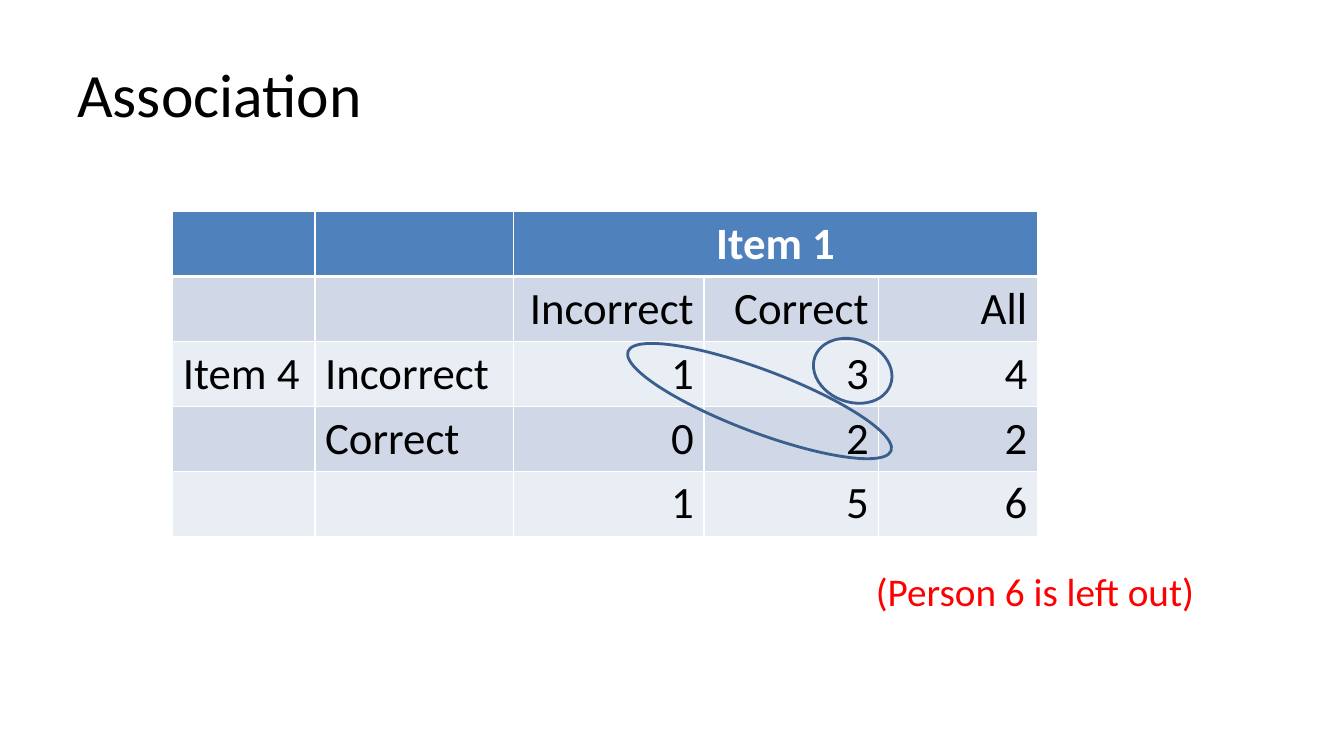
from lxml import etree
from pptx import Presentation
from pptx.dml.color import RGBColor
from pptx.enum import shapes, text
from pptx.oxml.ns import qn
from pptx.util import Pt

TITLE = "Association"
NOTE = "(Person 6 is left out)"
ROWS = [
    ["", "", "Item 1", "", ""],
    ["", "", "Incorrect", "Correct", "All"],
    ["Item 4", "Incorrect", "1", "3", "4"],
    ["", "Correct", "0", "2", "2"],
    ["", "", "1", "5", "6"],
]
LABELS = 2  # leading columns that hold row labels

THEME = {
    "font": "Calibri", "black": "000000", "white": "FFFFFF", "red": "FF0000",
    "head": "4F81BD", "bands": ("E9EDF4", "D0D8E8"), "ring": "3A5F8C",
    "title": 44, "cell": 32, "note": 28, "thin": 1, "thick": 3, "pen": 2,
}

# Boxes are left, top, width, height in points
TITLE_BOX = (48, 21.6, 864, 90)
NOTE_BOX = (618.5, 401.8, 245.5, 41)
GRID = (123.4, 151.2)
COLS = (101.6, 142, 135.9, 124.9, 113.2)
ROW = 46.2
RINGS = [(442.1, 264.2, 200.9, 44.6), (580.3, 242.6, 57.6, 44.6)]
TILT = 20.7


def color(name):
    return RGBColor.from_string(name)


def put(frame, words, size, tint, align, bold=False):
    """Write one styled line into a text frame."""
    para = frame.paragraphs[0]
    para.alignment = align
    run = para.add_run()
    run.text = words
    style = {"name": THEME["font"], "size": Pt(size), "bold": bold}
    for key, value in style.items():
        setattr(run.font, key, value)
    run.font.color.rgb = color(tint)


def edge(cell, row):
    """Draw white cell borders, with a thick rule below the head row."""
    props = cell._tc.get_or_add_tcPr()
    heavy = {0: "lnB", 1: "lnT"}.get(row)
    for side in ("lnL", "lnR", "lnT", "lnB"):
        width = THEME["thick" if side == heavy else "thin"]
        line = etree.SubElement(props, qn("a:" + side), w=str(Pt(width)))
        fill = etree.SubElement(line, qn("a:solidFill"))
        etree.SubElement(fill, qn("a:srgbClr"), val=THEME["white"])


def add_grid(slide):
    size = (sum(COLS), ROW * len(ROWS))
    frame = slide.shapes.add_table(len(ROWS), len(COLS), *map(Pt, GRID + size))
    table = frame.table
    for col, width in zip(table.columns, COLS):
        col.width = Pt(width)
    for r, words in enumerate(ROWS):
        table.rows[r].height = Pt(ROW)
        head = r == 0
        for c, word in enumerate(words):
            cell = table.cell(r, c)
            edge(cell, r)
            cell.fill.solid()
            cell.fill.fore_color.rgb = color(
                THEME["head"] if head else THEME["bands"][r % 2])
            if word:
                side = "CENTER" if head else "LEFT" if c < LABELS else "RIGHT"
                put(cell.text_frame, word, THEME["cell"],
                    THEME["white" if head else "black"],
                    text.PP_ALIGN[side], head)
    table.cell(0, LABELS).merge(table.cell(0, len(COLS) - 1))


def add_ring(slide, box):
    ring = slide.shapes.add_shape(shapes.MSO_SHAPE.OVAL, *map(Pt, box))
    ring.rotation = TILT
    ring.shadow.inherit = False
    ring.fill.background()
    ring.line.color.rgb = color(THEME["ring"])
    ring.line.width = Pt(THEME["pen"])


def main():
    deck = Presentation()
    deck.slide_width, deck.slide_height = Pt(960), Pt(540)
    slide = deck.slides.add_slide(deck.slide_layouts[5])
    left = text.PP_ALIGN.LEFT

    title = slide.shapes.title
    for key, value in zip(("left", "top", "width", "height"), TITLE_BOX):
        setattr(title, key, Pt(value))
    title.text_frame.vertical_anchor = text.MSO_ANCHOR.MIDDLE
    put(title.text_frame, TITLE, THEME["title"], THEME["black"], left)

    add_grid(slide)
    for box in RINGS:
        add_ring(slide, box)

    note = slide.shapes.add_textbox(*map(Pt, NOTE_BOX)).text_frame
    note.word_wrap = False
    note.auto_size = text.MSO_AUTO_SIZE.SHAPE_TO_FIT_TEXT
    put(note, NOTE, THEME["note"], THEME["red"], left)
    deck.save("out.pptx")


if __name__ == "__main__":
    main()
